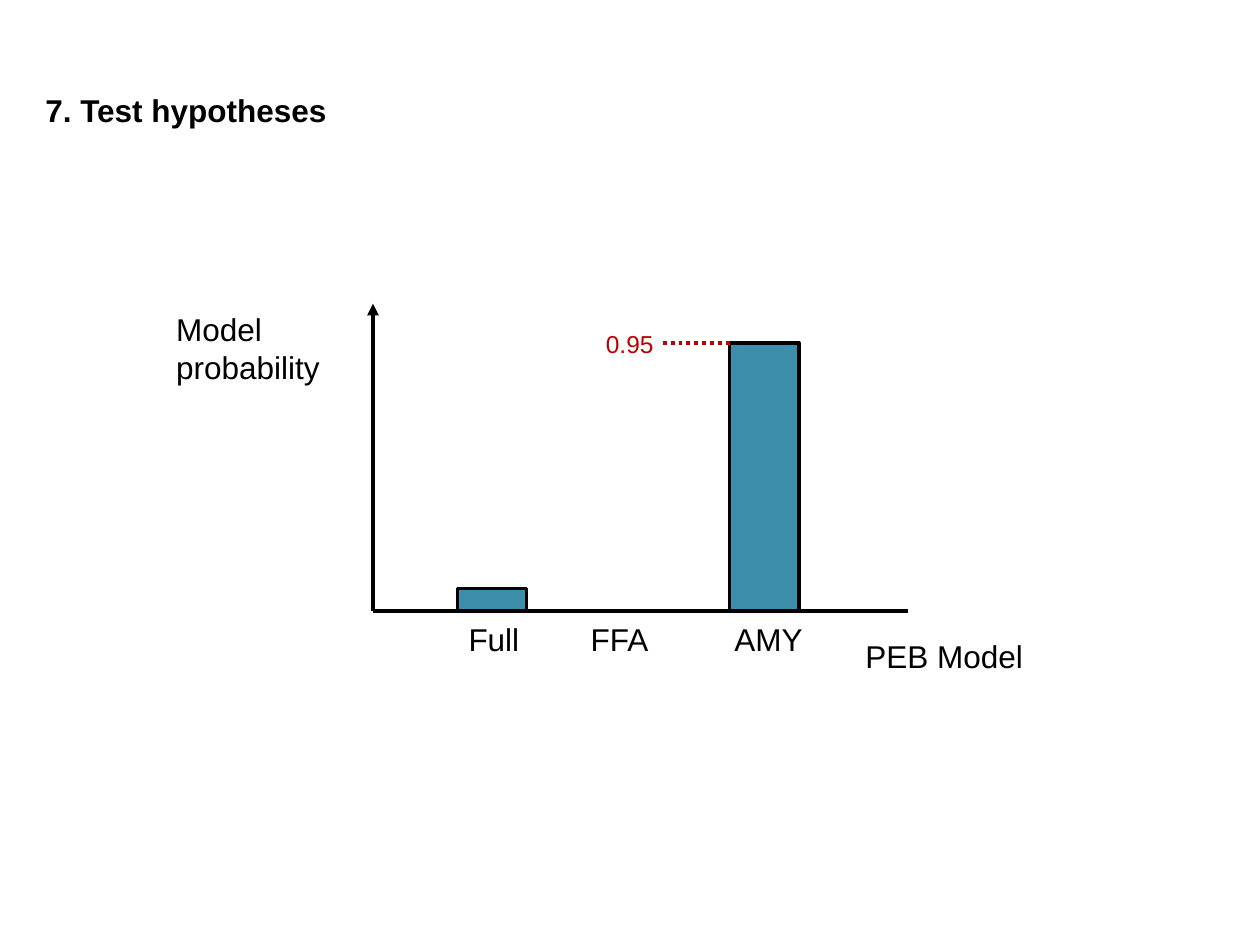
"""Build a slide that compares the probability of three models."""
from lxml import etree
from pptx import Presentation
from pptx.dml.color import RGBColor
from pptx.enum.dml import MSO_LINE
from pptx.enum.shapes import MSO_CONNECTOR, MSO_SHAPE
from pptx.enum.text import MSO_ANCHOR, MSO_AUTO_SIZE, PP_ALIGN
from pptx.oxml.ns import qn
from pptx.util import Inches, Pt

BLACK = RGBColor(0, 0, 0)
TEAL = RGBColor(0x3E, 0x8D, 0xAB)
RED = RGBColor(0xC0, 0, 0)
DOT = MSO_LINE.ROUND_DOT
LINE, RECT = MSO_CONNECTOR.STRAIGHT, MSO_SHAPE.RECTANGLE
TOP, LEFT = MSO_ANCHOR.TOP, PP_ALIGN.LEFT
NONE, GROW = MSO_AUTO_SIZE.NONE, MSO_AUTO_SIZE.SHAPE_TO_FIT_TEXT

TITLE = "7. Test hypotheses"
Y_NAME = ["Model", "probability"]
X_NAME = ["PEB Model"]
# name, value, label left, label width
MODELS = [("Full", 0.08, 3.62, 0.61), ("FFA", 0, 4.59, 0.66),
          ("AMY", 0.95, 5.73, 0.75)]
PEAK = "0.95"

WIDE, HIGH = 10, 7.5
X0, Y0 = 2.96, 4.85
X_END, Y_END = 7.21, 2.41
UNIT = 2.24
FIRST, STEP, BAR = 3.63, 1.08, 0.55
ROW = 0.4


def fill_text(shape, lines, size=18, color=BLACK, bold=False):
    frame = shape.text_frame
    for i, line in enumerate(lines):
        para = frame.add_paragraph() if i else frame.paragraphs[0]
        para.alignment = LEFT
        run = para.add_run()
        run.text = line
        font = run.font
        font.name, font.size, font.bold = "Arial", Pt(size), bold
        font.color.rgb = color
    frame.vertical_anchor = TOP
    return frame


def add_text(slide, lines, x, y, w, h, size=18, color=BLACK):
    box = slide.shapes.add_textbox(*map(Inches, (x, y, w, h)))
    frame = fill_text(box, lines, size, color)
    frame.word_wrap, frame.auto_size = False, GROW


def add_line(slide, x1, y1, x2, y2, color=BLACK):
    line = slide.shapes.add_connector(LINE, *map(Inches, (x1, y1, x2, y2)))
    line.line.color.rgb, line.line.width = color, Pt(2.25)
    etree.SubElement(line._element.spPr, qn("a:effectLst"))
    return line


def add_bar(slide, x, value):
    tall = UNIT * value
    bar = slide.shapes.add_shape(
        RECT, *map(Inches, (x, Y0 - tall, BAR, tall)))
    bar.shadow.inherit = False
    bar.fill.solid()
    bar.fill.fore_color.rgb = TEAL
    bar.line.color.rgb, bar.line.width = BLACK, Pt(2)


def main():
    deck = Presentation()
    deck.slide_width, deck.slide_height = Inches(WIDE), Inches(HIGH)
    slide = deck.slides.add_slide(deck.slide_layouts[5])

    title = slide.shapes.title
    title.left, title.top = Inches(0.26), Inches(0.67)
    title.width, title.height = Inches(7.81), Inches(ROW)
    frame = fill_text(title, [TITLE], bold=True)
    frame.word_wrap, frame.auto_size = True, NONE

    axis = add_line(slide, X0, Y0, X0, Y_END)
    tip = etree.SubElement(axis.line._get_or_add_ln(), qn("a:tailEnd"))
    tip.set("type", "triangle")
    add_line(slide, X0, Y0, X_END, Y0)
    add_text(slide, Y_NAME, 1.3, Y_END, 1.35, 0.71)
    add_text(slide, X_NAME, 6.77, 5.01, 1.46, ROW)

    for i, (name, value, x, w) in enumerate(MODELS):
        add_text(slide, [name], x, Y0 + 0.02, w, ROW)
        if value:
            add_bar(slide, FIRST + i * STEP, value)

    edge, level = FIRST + 2 * STEP, Y0 - UNIT * MODELS[-1][1]
    mark = add_line(slide, edge, level, edge - 0.53, level, RED)
    mark.line.dash_style = DOT
    add_text(slide, [PEAK], 4.71, level - 0.16, 0.58, 0.34, 14, RED)

    deck.save("out.pptx")


if __name__ == "__main__":
    main()
